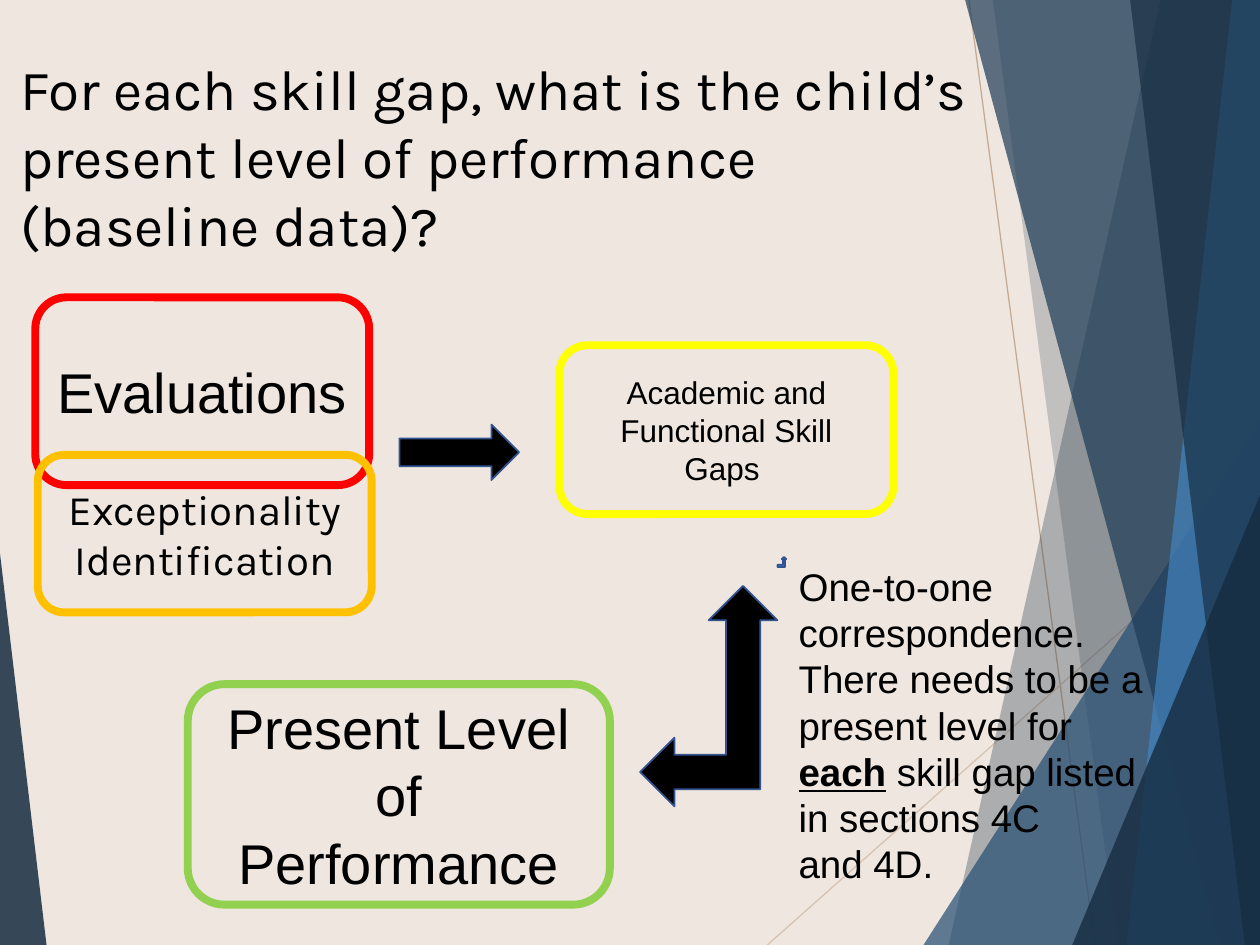
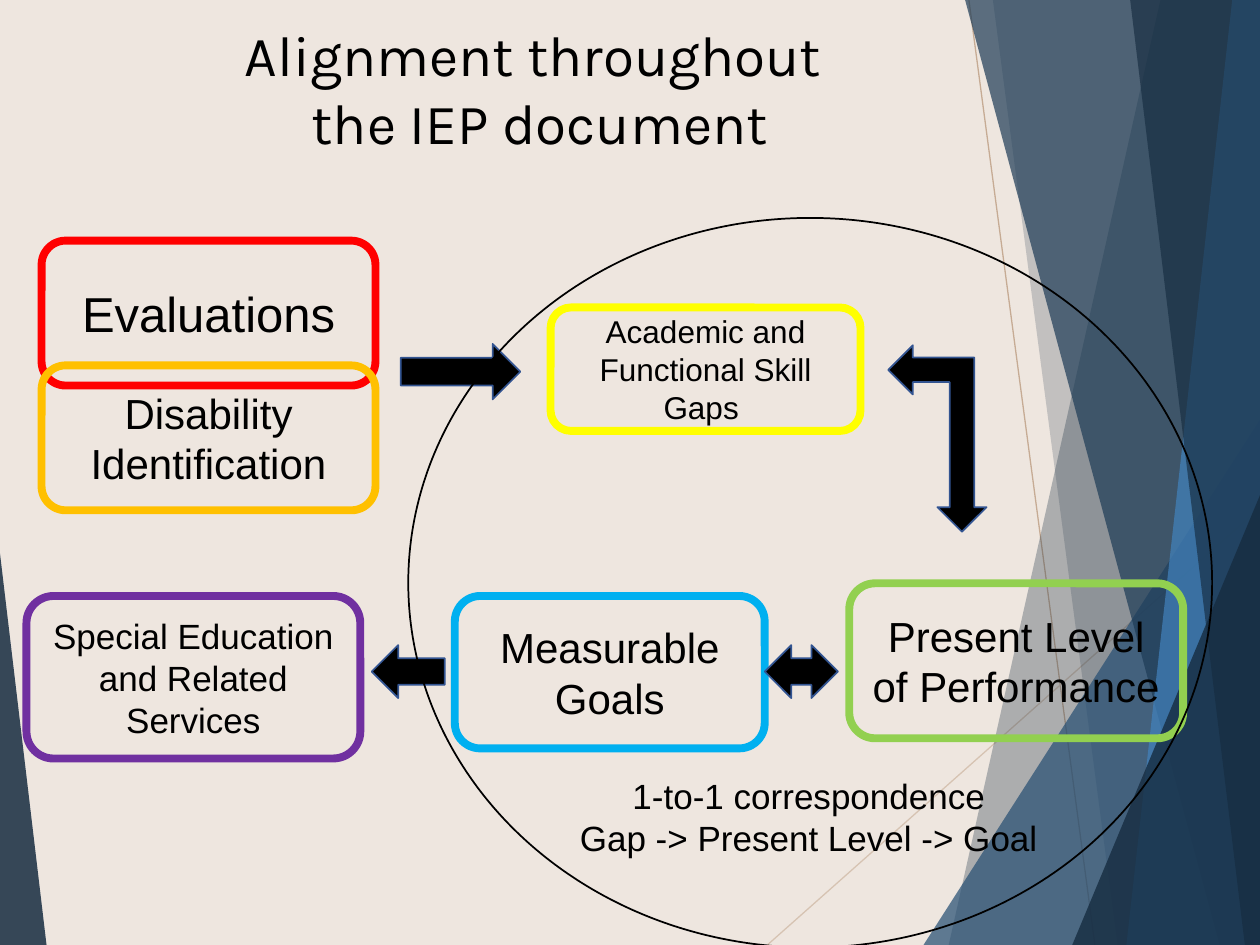
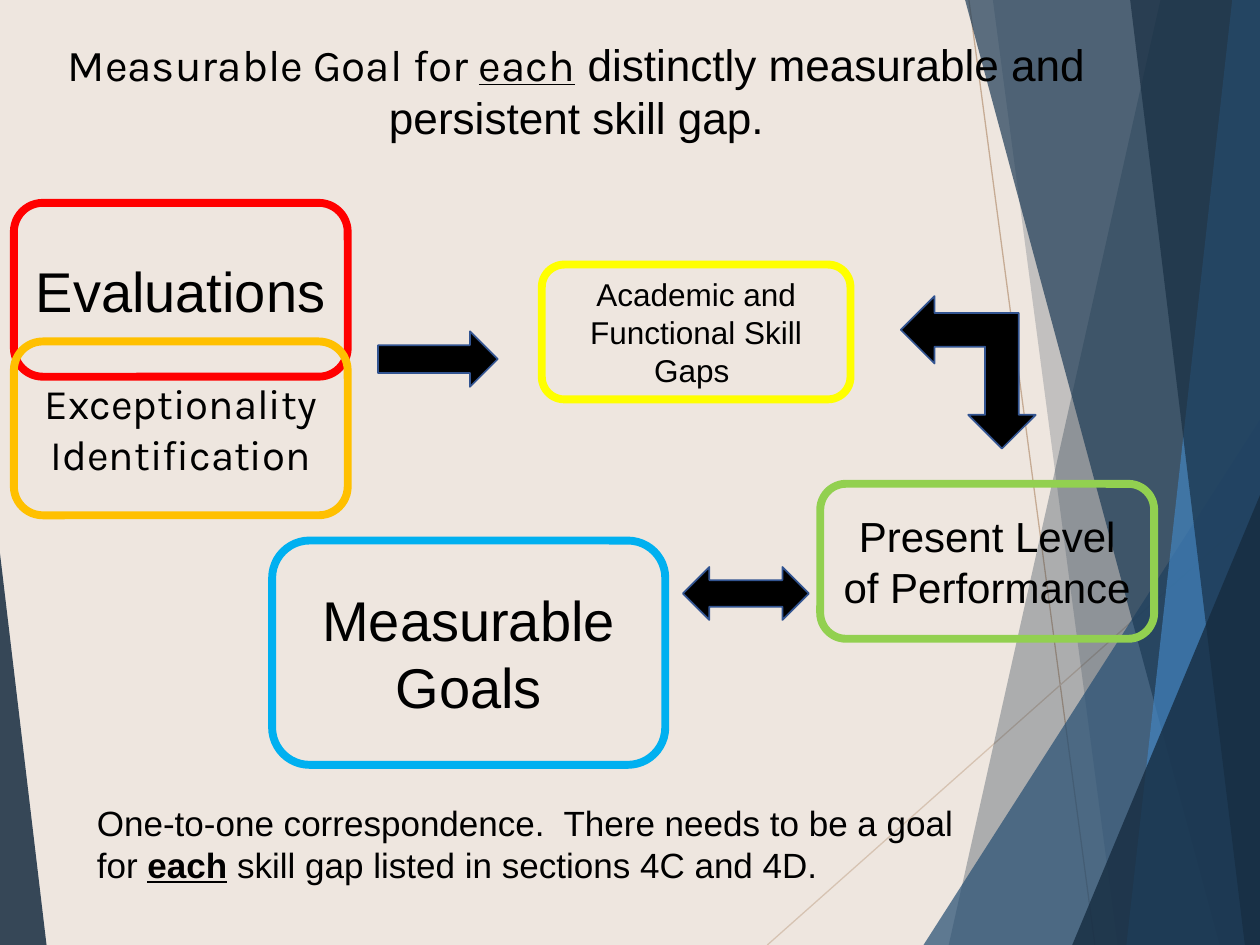
"""Build three slides on how the parts of an IEP align."""
import pptx
import pptx.util
import pptx.dml.color
import pptx.enum.shapes
import pptx.enum.text
import pptx.oxml.ns
from lxml import etree

RGB = pptx.dml.color.RGBColor
KIND = pptx.enum.shapes.MSO_SHAPE
ALIGN = pptx.enum.text.PP_ALIGN
FIT = pptx.enum.text.MSO_AUTO_SIZE
ANCHOR = pptx.enum.text.MSO_ANCHOR
Pt = pptx.util.Pt
qn = pptx.oxml.ns.qn

WIDE, HIGH = pptx.util.Inches(10), pptx.util.Inches(7.5)
COLS, ROWS = 100, 75

SAND = RGB(0xEE, 0xE6, 0xDF)
BLACK = RGB(0, 0, 0)
EDGE = RGB(0x32, 0x54, 0x91)
BLUE = RGB(0x44, 0x72, 0xC4)
RED = RGB(0xFF, 0, 0)
AMBER = RGB(0xFF, 0xC0, 0)
YELLOW = RGB(0xFF, 0xFF, 0)
GREEN = RGB(0x92, 0xD0, 0x50)
SKY = RGB(0, 0xB0, 0xF0)
PURPLE = RGB(0x70, 0x30, 0xA0)
NAVY = RGB(0x16, 0x2C, 0x40)
STEEL = RGB(0x27, 0x4F, 0x73)
DEEP = RGB(0x1D, 0x3B, 0x56)
BRIGHT = RGB(0x42, 0x83, 0xBE)
TAN = RGB(0xC6, 0xAB, 0x94)
PALE = RGB(0xD6, 0xC3, 0xB2)

HEAD, BODY = "Karla", "Arial"
GAPS = "Academic and Functional Skill Gaps "
LEVEL = "Present Level of Performance"
TRAIT = "Exceptionality Identification"
GOALS = "Measurable Goals"

RAYS = [
    (TAN, (76.9, 0), (86.9, 75)),
    (PALE, (100, 40.3), (60.9, 75)),
]
BANDS = [
    (NAVY, 30, [(92.1, 0), (100, 0), (100, 75), (75.3, 75)]),
    (NAVY, 20, [(78.8, 0), (100, 0), (100, 75), (88.7, 75)]),
    (STEEL, 72, [(73.3, 75), (100, 33.3), (100, 75)]),
    (DEEP, 70, [(76.6, 0), (100, 0), (100, 75), (96.8, 75)]),
    (BRIGHT, 70, [(97.8, 0), (100, 0), (100, 75), (89.4, 75)]),
    (NAVY, 65, [(89.7, 0), (100, 0), (100, 75), (98.8, 75)]),
    (NAVY, 80, [(85.1, 75), (100, 39.3), (100, 75)]),
    (NAVY, 85, [(0, 75), (0, 43.9), (3.7, 75)]),
]


def spot(col, row):
    """Turn a grid point into slide units."""
    return int(WIDE * col / COLS), int(HIGH * row / ROWS)


def area(left, top, wide, high):
    """Turn a grid box into slide units."""
    return *spot(left, top), *spot(wide, high)


def say(frame, text, size, font=BODY, align=ALIGN.CENTER, bold=True):
    """Write text, with the words between stars underlined."""
    frame.word_wrap = True
    frame.text = text.replace("*", "")
    for para, line in zip(frame.paragraphs, text.split("\n")):
        para.alignment = align
        if "*" in line:
            para.text = ""
            for turn, part in enumerate(line.split("*")):
                run = para.add_run()
                run.text = part
                if turn % 2:
                    run.font.underline = True
                    run.font.bold = bold
        for run in para.runs:
            run.font.size = Pt(size)
            run.font.name = font
            run.font.color.rgb = BLACK


def draw_ray(slide, tone, start, end):
    """Draw one thin line of the backdrop."""
    ray = slide.shapes.add_connector(
        pptx.enum.shapes.MSO_CONNECTOR.STRAIGHT, *spot(*start), *spot(*end))
    ray.line.color.rgb = tone
    ray.line.width = Pt(0.75)
    etree.SubElement(ray.element.spPr, qn("a:effectLst"))
    return ray


def draw_band(slide, tone, share, points):
    """Draw one see-through band of the backdrop."""
    first, *rest = [spot(*point) for point in points]
    path = slide.shapes.build_freeform(*first)
    path.add_line_segments(rest, close=True)
    band = path.convert_to_shape()
    band.shadow.inherit = False
    band.fill.solid()
    band.fill.fore_color.rgb = tone
    band.line.fill.background()
    shade = next(band.element.spPr.iter(qn("a:srgbClr")))
    etree.SubElement(shade, qn("a:alpha"), val=str(share * 1000))
    return band


def set_back(deck, layout, slide):
    """Give the layout its ground, rays and bands."""
    ground = deck.slide_master.background.fill
    ground.solid()
    ground.fore_color.rgb = SAND
    for holder in list(layout.placeholders):
        if holder.placeholder_format.idx:
            holder.element.getparent().remove(holder.element)
    parts = [draw_ray(slide, *ray) for ray in RAYS]
    parts += [draw_band(slide, *band) for band in BANDS]
    for part in parts:
        layout.shapes.element.append(part.element)


def set_title(slide, place, text, size=32.4, align=ALIGN.CENTER):
    """Place and write the slide's title."""
    title = slide.shapes.title
    title.left, title.top, title.width, title.height = area(*place)
    frame = title.text_frame
    frame.auto_size = FIT.NONE
    frame.vertical_anchor = ANCHOR.TOP
    say(frame, text, size, HEAD, align, None)
    return title


def add_form(slide, kind, place, fill, edge, weight):
    """Add a preset shape with a flat fill and edge."""
    form = slide.shapes.add_shape(kind, *area(*place))
    form.shadow.inherit = False
    if fill is None:
        form.fill.background()
    else:
        form.fill.solid()
        form.fill.fore_color.rgb = fill
    form.line.color.rgb = edge
    form.line.width = Pt(weight)
    return form


def add_box(slide, place, edge, text, size, font=BODY):
    """Add a round box that holds one step."""
    box = add_form(slide, KIND.ROUNDED_RECTANGLE, place, None, edge, 4.5)
    box.text_frame.vertical_anchor = ANCHOR.MIDDLE
    say(box.text_frame, text, size, font)


def add_arrow(slide, kind, place, turn=0, fill=BLACK):
    """Add a block arrow between steps."""
    arrow = add_form(slide, kind, place, fill, EDGE, 1)
    arrow.rotation = turn


def add_note(slide, place, text, size, align=ALIGN.LEFT):
    """Add a free text note."""
    frame = slide.shapes.add_textbox(*area(*place)).text_frame
    say(frame, text, size, align=align)
    frame.auto_size = FIT.SHAPE_TO_FIT_TEXT


def fill_level(slide):
    """Fill the slide on the present level."""
    set_title(slide, (0.6, 3.8, 79.4, 17.5),
              "For each skill gap, what is the child’s present level of "
              "performance (baseline data)?", align=ALIGN.LEFT)
    add_box(slide, (2.8, 23.6, 26.5, 14.9), RED, "Evaluations", 32)
    add_box(slide, (3, 36.1, 26.5, 12.5), AMBER, TRAIT, 24, HEAD)
    add_box(slide, (44.4, 27.4, 26.5, 13.4), YELLOW, GAPS, 18)
    add_arrow(slide, KIND.RIGHT_ARROW, (31.7, 33.7, 9.5, 4.4))
    add_box(slide, (14.9, 54.3, 33.5, 17.5), GREEN, LEVEL, 32)
    add_note(slide, (62.4, 44.2, 29.9, 26.9),
             "One-to-one correspondence.  There needs to be a present level "
             "for *each* skill gap listed in sections 4C\nand 4D.", 22)
    add_arrow(slide, KIND.BENT_UP_ARROW, (61.7, 44.2, 0.7, 0.8), fill=BLUE)
    add_arrow(slide, KIND.LEFT_UP_ARROW, (50.8, 46.5, 10.9, 17.5))


def fill_whole(slide):
    """Fill the slide on the whole document."""
    set_title(slide, (7, 1.1, 71.7, 12.3),
              "Alignment throughout \vthe IEP document")
    add_box(slide, (3.3, 19.1, 26.5, 11.5), RED, "Evaluations", 28)
    add_box(slide, (3.3, 29, 26.5, 11.5), AMBER,
            "Disability Identification", 24)
    add_box(slide, (43.7, 24.4, 24.6, 9.8), YELLOW, GAPS, 18)
    add_arrow(slide, KIND.RIGHT_ARROW, (31.8, 27.3, 9.5, 4.4))
    add_arrow(slide, KIND.LEFT_UP_ARROW, (67, 30.9, 14.8, 7.8), 270)
    add_box(slide, (67.4, 46.3, 26.5, 12.3), GREEN, LEVEL, 24)
    add_box(slide, (36.1, 47.3, 24.6, 12.1), SKY, GOALS, 24)
    add_arrow(slide, KIND.LEFT_RIGHT_ARROW, (60.7, 51.2, 5.8, 4.2))
    add_arrow(slide, KIND.LEFT_ARROW, (29.5, 51.2, 5.8, 4.2))
    add_box(slide, (2.1, 47.3, 26.5, 12.9), PURPLE,
            "Special Education and Related Services", 20)
    add_form(slide, KIND.FLOWCHART_CONNECTOR, (32.4, 17.3, 63.8, 57.9),
             None, BLACK, 1)
    add_note(slide, (44.6, 61, 39.2, 7.7),
             "1-to-1 correspondence\nGap -> Present Level -> Goal", 20,
             ALIGN.CENTER)


def fill_goal(slide):
    """Fill the slide on goals for each gap."""
    title = set_title(slide, (-0.1, 2.5, 91.7, 11.8),
                      "Measurable Goal for *each* distinctly measurable and "
                      "persistent skill gap.", 25.2)
    title.text_frame.paragraphs[0].runs[-1].font.name = BODY
    add_box(slide, (1.1, 16.1, 26.5, 13.8), RED, "Evaluations", 32)
    add_box(slide, (1.1, 27.1, 26.5, 13.8), AMBER, TRAIT, 24, HEAD)
    add_box(slide, (43, 21, 24.5, 10.7), YELLOW, GAPS, 18)
    add_arrow(slide, KIND.RIGHT_ARROW, (30, 26.3, 9.5, 4.4))
    add_box(slide, (65.1, 38.4, 26.5, 12.3), GREEN, LEVEL, 24)
    add_box(slide, (21.6, 42.9, 31.2, 17.8), SKY, GOALS, 32)
    add_note(slide, (6.7, 63.1, 71.5, 7.7),
             "One-to-one correspondence.  There needs to be a goal for "
             "*each* skill gap listed in sections 4C and 4D.", 20)
    add_arrow(slide, KIND.LEFT_UP_ARROW, (70.8, 24.2, 12.1, 10.7), 270)
    add_arrow(slide, KIND.LEFT_RIGHT_ARROW, (54.2, 45, 10, 4.2))


def main():
    """Build and save the deck."""
    deck = pptx.Presentation()
    deck.slide_width, deck.slide_height = WIDE, HIGH
    layout = deck.slide_layouts[5]
    slides = [deck.slides.add_slide(layout) for _ in range(3)]
    set_back(deck, layout, slides[0])
    for fill, slide in zip((fill_level, fill_whole, fill_goal), slides):
        fill(slide)
    deck.save("out.pptx")


if __name__ == "__main__":
    main()
